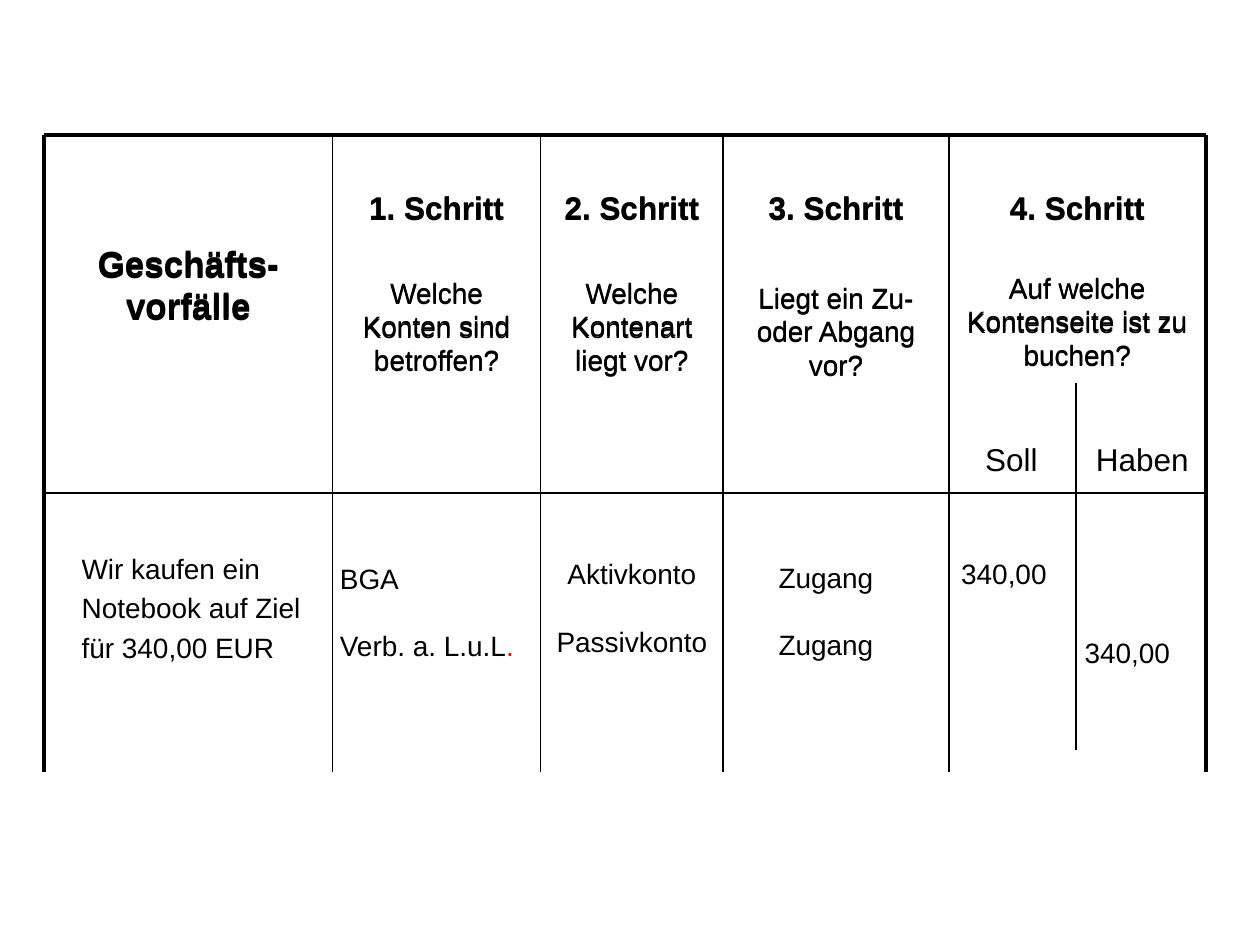
from dataclasses import dataclass
from typing import Optional

from lxml import etree
from pptx import Presentation
from pptx.dml.color import RGBColor
from pptx.enum import shapes, text
from pptx.oxml import ns
from pptx.util import Inches, Pt


@dataclass(frozen=True)
class Theme:
    font: str = "Arial"
    ink: RGBColor = RGBColor(0, 0, 0)
    accent: RGBColor = RGBColor(255, 0, 0)
    heading: float = 20
    step: float = 18
    body: float = 16
    border: float = 2.25
    grid: float = 1
    divider: float = 0.75


THEME = Theme()


@dataclass(frozen=True)
class Run:
    content: str
    size: float = THEME.body
    bold: bool = False
    color: RGBColor = THEME.ink


@dataclass(frozen=True)
class Line:
    runs: tuple[Run, ...]
    space_before: float = 0


@dataclass(frozen=True)
class Block:
    left: float
    top: float
    width: float
    height: float
    lines: tuple[Line, ...]
    inset_top: float = 0.05
    centered: bool = False
    wrap: bool = True


@dataclass(frozen=True)
class Rule:
    start: tuple[float, float]
    end: tuple[float, float]
    weight: float


@dataclass(frozen=True)
class Step:
    title: str
    question: str
    gap: float


COLUMNS = (0.35, 2.64, 4.29, 5.74, 7.53, 9.57)
TOP, MIDDLE, BOTTOM = 1.07, 3.91, 6.13
HEADER_LAYERS = (TOP, TOP + 0.01)
HEADER_HEIGHT = MIDDLE - TOP
BODY_HEIGHT = BOTTOM - MIDDLE
DIVIDER = 8.54

STEPS = (
    Step("1. Schritt", "Welche Konten sind betroffen?", 28.4),
    Step("2. Schritt", "Welche Kontenart liegt vor?", 28.4),
    Step("3. Schritt", "Liegt ein Zu- oder Abgang vor?", 31.2),
    Step("4. Schritt", "Auf welche Kontenseite ist zu buchen?", 25.6),
)


def plain(*contents: str, gap: float = 0, size: float = THEME.body) -> tuple[Line, ...]:
    return tuple(
        Line((Run(content, size),), gap if index else 0)
        for index, content in enumerate(contents)
    )


def header_blocks(top: float) -> list[Block]:
    heading = Line((Run("Geschäfts-vorfälle", THEME.heading, True),))
    blocks = [
        Block(COLUMNS[0], top, COLUMNS[1] - COLUMNS[0], HEADER_HEIGHT, (heading,), 0.85, True)
    ]
    for step, left, right in zip(STEPS, COLUMNS[1:], COLUMNS[2:]):
        lines = (
            Line((Run(step.title, THEME.step, True),)),
            Line((Run(step.question),), step.gap),
        )
        blocks.append(Block(left, top, right - left, HEADER_HEIGHT, lines, 0.42, True))
    return blocks


def body_blocks() -> list[Block]:
    accounts = (
        Line((Run("BGA"),)),
        Line((Run("Verb. a. L.u.L"), Run(".", color=THEME.accent)), 19.2),
    )
    event = plain("Wir kaufen ein", "Notebook auf Ziel", "für 340,00 EUR", gap=3.2)
    return [
        Block(0.55, 4.33, 1.96, 1.29, event, wrap=False),
        Block(2.6, 4.41, 1.66, 0.91, accounts, wrap=False),
        Block(4.29, 3.92, 1.45, BODY_HEIGHT,
              plain("Aktivkonto", "Passivkonto", gap=19.6), 0.5, True),
        Block(5.84, 4.4, 1.43, 0.9, plain("Zugang", "Zugang", gap=19.2), centered=True),
        Block(7.53, 3.92, 1.01, BODY_HEIGHT, plain("340,00"), 0.5),
        Block(8.51, 3.92, 1.05, BODY_HEIGHT, plain("340,00"), 1.12),
        Block(7.72, 3.44, 0.62, 0.4, plain("Soll", size=THEME.step), wrap=False),
        Block(8.6, 3.44, 0.94, 0.4, plain("Haben", size=THEME.step), wrap=False),
    ]


def grid_rules() -> list[Rule]:
    left, *inner, right = COLUMNS
    rules = [
        Rule((left, TOP), (right, TOP), THEME.border),
        Rule((left, MIDDLE), (right, MIDDLE), THEME.grid),
        Rule((DIVIDER, 3.04), (DIVIDER, 5.95), THEME.divider),
    ]
    rules += [Rule((x, TOP), (x, BOTTOM), THEME.grid) for x in inner]
    rules += [Rule((x, TOP), (x, BOTTOM), THEME.border) for x in (left, right)]
    return rules


def draw_block(slide, block: Block) -> None:
    shape = slide.shapes.add_textbox(
        Inches(block.left), Inches(block.top), Inches(block.width), Inches(block.height)
    )
    frame = shape.text_frame
    frame.word_wrap = block.wrap
    frame.margin_top = Inches(block.inset_top)
    paragraph: Optional[object] = None
    for line in block.lines:
        paragraph = frame.add_paragraph() if paragraph else frame.paragraphs[0]
        paragraph.alignment = text.PP_ALIGN.CENTER if block.centered else text.PP_ALIGN.LEFT
        paragraph.space_before = Pt(line.space_before)
        for item in line.runs:
            run = paragraph.add_run()
            run.text = item.content
            run.font.name = THEME.font
            run.font.size = Pt(item.size)
            run.font.bold = item.bold
            run.font.color.rgb = item.color


def draw_rule(slide, rule: Rule) -> None:
    ends = [Inches(value) for value in (*rule.start, *rule.end)]
    connector = slide.shapes.add_connector(shapes.MSO_CONNECTOR.STRAIGHT, *ends)
    connector.line.color.rgb = THEME.ink
    connector.line.width = Pt(rule.weight)
    etree.SubElement(connector._element.spPr, ns.qn("a:effectLst"))


def main() -> None:
    presentation = Presentation()
    presentation.slide_width = Inches(10)
    presentation.slide_height = Inches(7.5)
    slide = presentation.slides.add_slide(presentation.slide_layouts[6])
    for rule in grid_rules():
        draw_rule(slide, rule)
    for top in HEADER_LAYERS:
        for block in header_blocks(top):
            draw_block(slide, block)
    for block in body_blocks():
        draw_block(slide, block)
    presentation.save("out.pptx")


if __name__ == "__main__":
    main()
